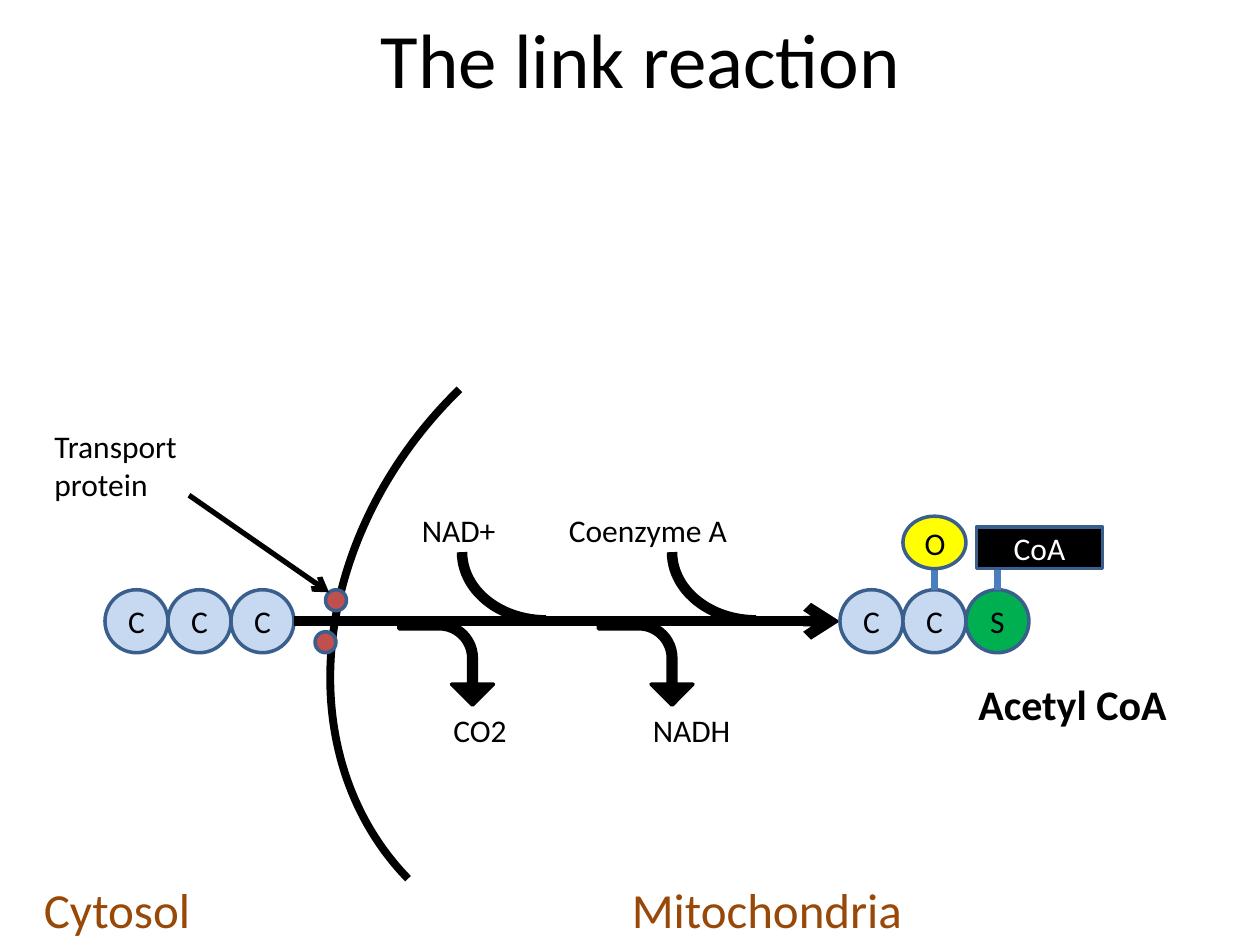
from lxml import etree
from pptx import Presentation
from pptx.dml import color
from pptx.enum import shapes, text
from pptx.oxml import ns
from pptx.util import Pt

RGB = color.RGBColor
BLACK = RGB(0, 0, 0)
WHITE = RGB(255, 255, 255)
PALE = RGB(0xC6, 0xD9, 0xF1)
NAVY = RGB(0x3A, 0x5F, 0x8C)
BLUE = RGB(0x4B, 0x7E, 0xBC)
RED = RGB(0xC0, 0x50, 0x4D)
GREEN = RGB(0, 0xB0, 0x50)
YELLOW = RGB(255, 255, 0)
BROWN = RGB(0x98, 0x48, 0x07)
KIND = shapes.MSO_SHAPE
SIZE = 36


def style(frame, words, size, ink, bold=False, center=False):
    frame.text = words
    frame.word_wrap = True
    para = frame.paragraphs[0]
    para.alignment = text.PP_ALIGN.CENTER if center else text.PP_ALIGN.LEFT
    font = para.runs[0].font
    font.name, font.size, font.bold = "Calibri", Pt(size), bold
    font.color.rgb = ink


def label(slide, box, words, size=18, ink=BLACK, bold=False, center=False):
    frame = slide.shapes.add_textbox(*map(Pt, box)).text_frame
    style(frame, words, size, ink, bold, center)
    if center:
        frame.vertical_anchor = text.MSO_ANCHOR.MIDDLE


def shape(slide, kind, box, fill=None, edge=NAVY, width=2, turn=0):
    item = slide.shapes.add_shape(kind, *map(Pt, box))
    item.shadow.inherit = False
    item.rotation = turn
    if fill is None:
        item.fill.background()
    else:
        item.fill.solid()
        item.fill.fore_color.rgb = fill
    item.line.color.rgb = edge
    item.line.width = Pt(width)
    return item


def part(slide, kind, box, words, fill=PALE, ink=BLACK):
    item = shape(slide, kind, box, fill)
    item.text_frame.vertical_anchor = text.MSO_ANCHOR.MIDDLE
    style(item.text_frame, words, 18, ink, center=True)


def line(slide, ends, ink, width, arrow=False):
    item = slide.shapes.add_connector(
        shapes.MSO_CONNECTOR.STRAIGHT, *map(Pt, ends))
    item.line.color.rgb = ink
    item.line.width = Pt(width)
    if arrow:
        stroke = item.line._get_or_add_ln()
        etree.SubElement(stroke, ns.qn("a:tailEnd"), type="arrow")
    etree.SubElement(item._element.spPr, ns.qn("a:effectLst"))


def chain(slide, x, y, atoms):
    for i, (name, fill) in enumerate(atoms):
        box = (x + i * SIZE, y, SIZE, SIZE)
        part(slide, KIND.OVAL, box, name, fill)


def membrane(slide, x, y):
    shape(slide, KIND.ARC, (x, y, 360, 432), edge=BLACK, width=4.5, turn=225.8)
    for dx, dy in ((-22, 201.5), (-28, 225.5)):
        shape(slide, KIND.OVAL, (x + dx, y + dy, 12, 12), RED)
    label(slide, (x - 184, y + 105, 132, 51), "Transport protein")
    line(slide, (x - 100, y + 147.5, x - 20, y + 203), BLACK, 3, True)


def pathway(slide, x, y):
    line(slide, (x, y, x + 312, y), BLACK, 6, True)
    for dx, name in ((63, "CO2"), (177, "NADH")):
        bend = shape(slide, KIND.BENT_ARROW, (x + dx, y - 3, 48, 54),
                     BLACK, BLACK, turn=90)
        for i, value in enumerate((0.09, 0.25, 0.25, 0.44)):
            bend.adjustments[i] = value
        label(slide, (x + dx + 21, y + 47.5, 78, 29), name)
    for dx, gap, wide, name in ((96, 30, 78, "NAD+"),
                                (216, 66, 120, "Coenzyme A")):
        shape(slide, KIND.ARC, (x + dx, y - 78.5, 96, 78),
              edge=BLACK, width=6, turn=180)
        label(slide, (x + dx - gap, y - 66.5, wide, 29), name)


def acetyl(slide, x, y):
    chain(slide, x, y, (("C", PALE), ("C", PALE), ("S", GREEN)))
    for i in (1, 2):
        mid = x + (i + 0.5) * SIZE
        line(slide, (mid, y, mid, y - 18), BLUE, 4.5)
    part(slide, KIND.RECTANGLE, (x + 78, y - 36, 72, 24), "CoA", BLACK, WHITE)
    part(slide, KIND.OVAL, (x + SIZE, y - 42, SIZE, 30), "O", YELLOW)
    label(slide, (x + 72, y + 47, 168, 36), "Acetyl CoA", 24, bold=True)


def regions(slide, x, y):
    for dx, name in ((0, "Cytosol"), (336, "Mitochondria")):
        label(slide, (x + dx, y, 222, 41), name, 28, BROWN)


def main():
    deck = Presentation()
    deck.slide_width, deck.slide_height = Pt(720), Pt(540)
    slide = deck.slides.add_slide(deck.slide_layouts[6])
    label(slide, (42, -12, 648, 90), "The link reaction", 44, center=True)
    chain(slide, 60, 337, [("C", PALE)] * 3)
    membrane(slide, 208, 135.5)
    pathway(slide, 168, 355)
    acetyl(slide, 480, 337)
    regions(slide, 18, 499)
    deck.save("out.pptx")


if __name__ == "__main__":
    main()
